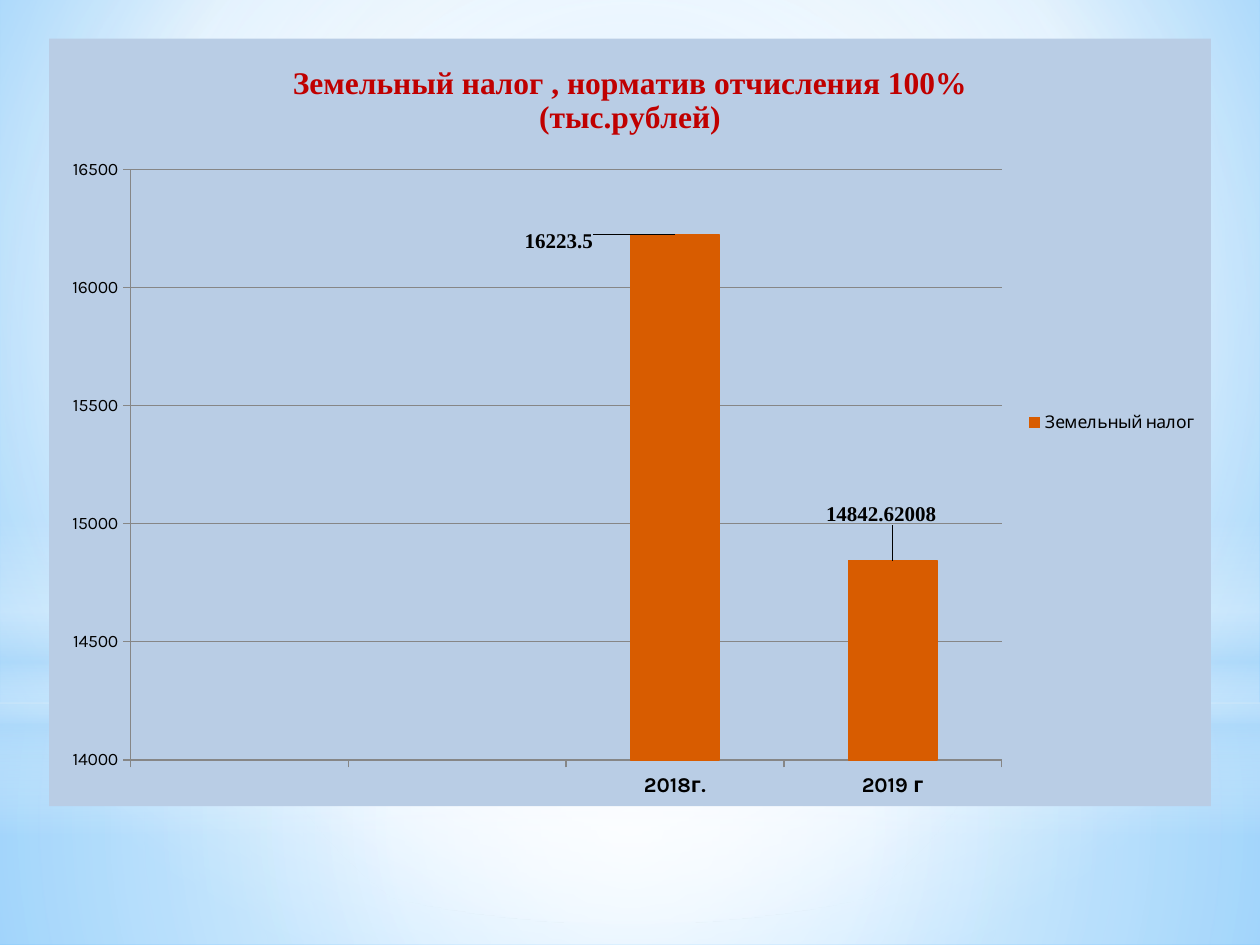
"""Build a slide with a column chart of land tax revenue on a soft blue gradient."""
from dataclasses import dataclass

from lxml import etree
from pptx import Presentation
from pptx.chart.chart import Chart
from pptx.chart.data import CategoryChartData
from pptx.dml.color import RGBColor
from pptx.enum.chart import XL_CHART_TYPE, XL_LEGEND_POSITION, XL_TICK_MARK
from pptx.enum.shapes import MSO_SHAPE
from pptx.oxml import parse_xml
from pptx.oxml.ns import nsdecls, qn
from pptx.slide import Slide
from pptx.util import Inches, Pt

COLUMN = XL_CHART_TYPE.COLUMN_CLUSTERED
LEGEND_RIGHT = XL_LEGEND_POSITION.RIGHT
TICK_OUTSIDE = XL_TICK_MARK.OUTSIDE
RECTANGLE = MSO_SHAPE.RECTANGLE
OVAL = MSO_SHAPE.OVAL

SLIDE_WIDTH = Inches(10)
SLIDE_HEIGHT = Inches(7.5)

WHITE = RGBColor(0xFF, 0xFF, 0xFF)
BLACK = RGBColor(0x00, 0x00, 0x00)
PALE_BLUE = RGBColor(0xB4, 0xDC, 0xFA)
SKY_BLUE = RGBColor(0x9E, 0xD5, 0xFF)
DEEP_BLUE = RGBColor(0x5B, 0xB9, 0xFF)
CHART_BLUE = RGBColor(0xB9, 0xCD, 0xE5)
ORANGE = RGBColor(0xD8, 0x5C, 0x00)
RED = RGBColor(0xC0, 0x00, 0x00)
GREY = RGBColor(0x86, 0x86, 0x86)

BODY_FONT = "Karla"
TITLE_FONT = "Times New Roman"
TITLE = "Земельный налог , норматив отчисления 100%\n(тыс.рублей)"
SERIES_NAME = "Земельный налог"
CATEGORIES = ("", "", "2018г.", "2019 г")
VALUES = (None, None, 16223.5, 14842.62008)
LABEL_SHIFTS = {2: (-0.1, 0.03), 3: (-0.01, -0.04)}
PLOT_AREA = {"x": 0.07, "y": 0.17, "w": 0.75, "h": 0.77}


@dataclass(frozen=True)
class Stop:
    position: int
    color: RGBColor
    opacity: int = 100


@dataclass(frozen=True)
class Gradient:
    stops: tuple[Stop, ...]
    focus: tuple[int, int, int, int] = (50, 50, 50, 50)
    linear: bool = False


@dataclass(frozen=True)
class Glow:
    shape_type: MSO_SHAPE
    top: float
    height: float
    gradient: Gradient


BACKGROUND = Gradient(
    (Stop(0, SKY_BLUE), Stop(60, WHITE), Stop(100, DEEP_BLUE)), (20, 10, 20, 60)
)
GLOWS = (
    Glow(RECTANGLE, 0.744, 0.256, Gradient(
        (Stop(0, WHITE, 91), Stop(37, WHITE, 76), Stop(100, PALE_BLUE, 79)))),
    Glow(RECTANGLE, 0, 0.744, Gradient(
        (Stop(0, WHITE, 89), Stop(48, WHITE, 62), Stop(100, PALE_BLUE, 79)))),
    Glow(RECTANGLE, 0.55, 0.333, Gradient(
        (Stop(0, WHITE, 0), Stop(29, WHITE, 30), Stop(45, PALE_BLUE, 40),
         Stop(55, WHITE, 26), Stop(65, PALE_BLUE, 60), Stop(100, WHITE, 0)),
        linear=True)),
    Glow(OVAL, 0.233, 0.744, Gradient((Stop(0, WHITE), Stop(56, WHITE, 0)))),
)


def apply_gradient(owner: etree.ElementBase, gradient: Gradient) -> None:
    """Replace the solid fill inside the owner with a gradient."""
    stops = "".join(
        f'<a:gs pos="{stop.position * 1000}"><a:srgbClr val="{stop.color}">'
        f'<a:alpha val="{stop.opacity * 1000}"/></a:srgbClr></a:gs>'
        for stop in gradient.stops
    )
    if gradient.linear:
        direction = '<a:lin ang="5400000" scaled="0"/>'
    else:
        edges = " ".join(
            f'{side}="{share * 1000}"' for side, share in zip("ltrb", gradient.focus)
        )
        direction = f'<a:path path="circle"><a:fillToRect {edges}/></a:path>'
    solid = owner.find(".//" + qn("a:solidFill"))
    solid.getparent().replace(solid, parse_xml(
        f'<a:gradFill {nsdecls("a")} rotWithShape="1">'
        f"<a:gsLst>{stops}</a:gsLst>{direction}</a:gradFill>"
    ))


def draw_glow(slide: Slide, glow: Glow) -> None:
    """Draw one full-width gradient shape."""
    shape = slide.shapes.add_shape(
        glow.shape_type, 0, int(SLIDE_HEIGHT * glow.top),
        SLIDE_WIDTH, int(SLIDE_HEIGHT * glow.height),
    )
    shape.shadow.inherit = False
    shape.line.fill.background()
    shape.fill.solid()
    apply_gradient(shape.element, glow.gradient)


def manual_layout(entries: dict[str, float], inner: bool = False) -> etree.ElementBase:
    """Return a chart layout element with the given shares."""
    modes = ""
    if inner:
        modes = ('<c:layoutTarget val="inner"/><c:xMode val="edge"/>'
                 '<c:yMode val="edge"/>')
    shares = "".join(f'<c:{name} val="{share}"/>' for name, share in entries.items())
    return parse_xml(
        f'<c:layout {nsdecls("c")}><c:manualLayout>{modes}{shares}'
        "</c:manualLayout></c:layout>"
    )


def format_title(chart: Chart) -> None:
    """Write the chart title."""
    text_frame = chart.chart_title.text_frame
    text_frame.text = TITLE
    for paragraph in text_frame.paragraphs:
        for run in paragraph.runs:
            run.font.name = TITLE_FONT
            run.font.size = Pt(18)
            run.font.bold = True
            run.font.color.rgb = RED
    chart.chart_title.include_in_layout = False


def format_axes(chart: Chart) -> None:
    """Set scale, ticks, lines and fonts of both axes."""
    for axis in (chart.category_axis, chart.value_axis):
        axis.major_tick_mark = TICK_OUTSIDE
        axis.format.line.color.rgb = GREY
    chart.category_axis.tick_labels.font.size = Pt(12)
    chart.category_axis.tick_labels.font.bold = True
    value_axis = chart.value_axis
    value_axis.minimum_scale, value_axis.maximum_scale = 14000, 16500
    value_axis.major_unit = 500
    value_axis.major_gridlines.format.line.color.rgb = GREY


def format_series(chart: Chart) -> None:
    """Colour the columns and place their value labels."""
    plot = chart.plots[0]
    plot.vary_by_categories = False
    plot.gap_width = 147
    series = plot.series[0]
    series.format.fill.solid()
    series.format.fill.fore_color.rgb = ORANGE
    series.format.line.color.rgb = ORANGE
    series.format.line.width = Pt(0.75)
    for index, (shift_x, shift_y) in LABEL_SHIFTS.items():
        font = series.points[index].data_label.font
        font.name = TITLE_FONT
        font.size = Pt(12)
        font.bold = True
        font.color.rgb = BLACK
    for label, shift in zip(chart.element.iter(qn("c:dLbl")), LABEL_SHIFTS.values()):
        label.insert(1, manual_layout(dict(zip("xy", shift))))


def draw_chart(slide: Slide) -> None:
    """Add the land tax chart."""
    data = CategoryChartData()
    data.categories = CATEGORIES
    data.add_series(SERIES_NAME, VALUES)
    frame = slide.shapes.add_chart(
        COLUMN, int(SLIDE_WIDTH * 0.039), int(SLIDE_HEIGHT * 0.041),
        int(SLIDE_WIDTH * 0.922), int(SLIDE_HEIGHT * 0.812), data,
    )
    chart = frame.chart
    chart.font.name = BODY_FONT
    chart.font.size = Pt(10)
    chart.font.color.rgb = BLACK
    format_title(chart)
    format_axes(chart)
    format_series(chart)
    chart.has_legend = True
    chart.legend.position = LEGEND_RIGHT
    chart.legend.include_in_layout = False
    plot_area = chart.element.find(".//" + qn("c:plotArea"))
    for layout in plot_area.findall(qn("c:layout")):
        plot_area.remove(layout)
    plot_area.insert(0, manual_layout(PLOT_AREA, inner=True))
    chart.element.find(qn("c:chart")).addnext(parse_xml(
        f'<c:spPr {nsdecls("c", "a")}><a:solidFill><a:srgbClr val="{CHART_BLUE}"/>'
        "</a:solidFill><a:ln><a:noFill/></a:ln></c:spPr>"
    ))


def main() -> None:
    """Build and save the presentation."""
    presentation = Presentation()
    presentation.slide_width, presentation.slide_height = SLIDE_WIDTH, SLIDE_HEIGHT
    slide = presentation.slides.add_slide(presentation.slide_layouts[6])
    slide.background.fill.solid()
    apply_gradient(slide.element, BACKGROUND)
    for glow in GLOWS:
        draw_glow(slide, glow)
    draw_chart(slide)
    presentation.save("out.pptx")


if __name__ == "__main__":
    main()
